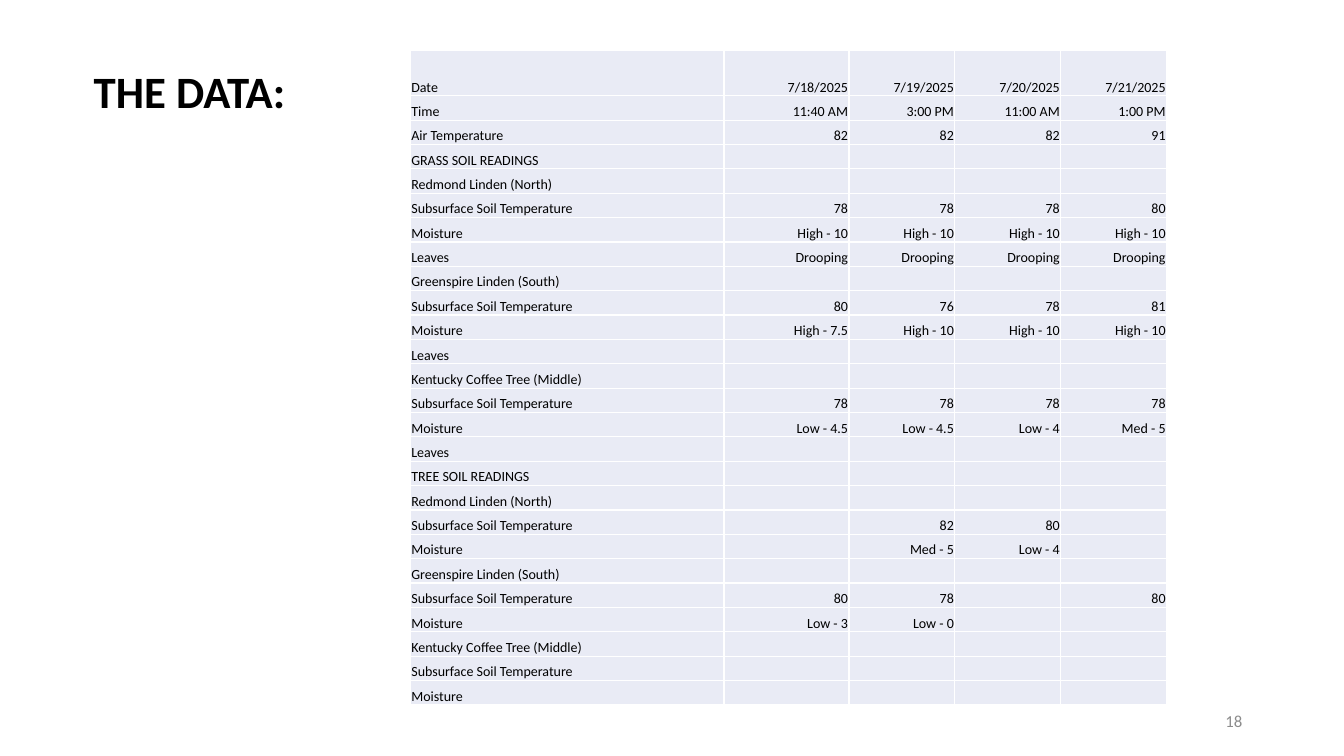
from lxml import etree
from pptx import Presentation
from pptx.dml.color import RGBColor
from pptx.enum.text import MSO_ANCHOR, PP_ALIGN
from pptx.oxml.ns import qn
from pptx.util import Inches, Pt

BLACK = RGBColor(0x00, 0x00, 0x00)
GRAY = RGBColor(0x8C, 0x8C, 0x8C)
WHITE = RGBColor(0xFF, 0xFF, 0xFF)
PALE_BLUE = RGBColor(0xE9, 0xEB, 0xF5)
LEFT, RIGHT = PP_ALIGN.LEFT, PP_ALIGN.RIGHT
TOP, MIDDLE, BOTTOM = MSO_ANCHOR.TOP, MSO_ANCHOR.MIDDLE, MSO_ANCHOR.BOTTOM

FONT = "Calibri"
CELL_SIZE = 10
PAGE_WIDTH, PAGE_HEIGHT = 13.33, 7.5
MARGIN = 0.5
TABLE_LEFT, TABLE_HEIGHT = 4.07, 6.5
COLUMN_WIDTHS = [3.11, 1.24] + [1.05] * 3
DATE_ROW_HEIGHT = 0.45

NORTH = "Redmond Linden (North)"
SOUTH = "Greenspire Linden (South)"
CENTER = "Kentucky Coffee Tree (Middle)"
SUBSURFACE = "Subsurface Soil Temperature"

READINGS = [
    ("Date", "7/18/2025", "7/19/2025", "7/20/2025", "7/21/2025"),
    ("Time", "11:40 AM", "3:00 PM", "11:00 AM", "1:00 PM"),
    ("Air Temperature", "82", "82", "82", "91"),
    ("GRASS SOIL READINGS",),
    (NORTH,),
    (SUBSURFACE, "78", "78", "78", "80"),
    ("Moisture", "High - 10", "High - 10", "High - 10", "High - 10"),
    ("Leaves", "Drooping", "Drooping", "Drooping", "Drooping"),
    (SOUTH,),
    (SUBSURFACE, "80", "76", "78", "81"),
    ("Moisture", "High - 7.5", "High - 10", "High - 10", "High - 10"),
    ("Leaves",),
    (CENTER,),
    (SUBSURFACE, "78", "78", "78", "78"),
    ("Moisture", "Low - 4.5", "Low - 4.5", "Low - 4", "Med - 5"),
    ("Leaves",),
    ("TREE SOIL READINGS",),
    (NORTH,),
    (SUBSURFACE, "", "82", "80"),
    ("Moisture", "", "Med - 5", "Low - 4"),
    (SOUTH,),
    (SUBSURFACE, "80", "78", "", "80"),
    ("Moisture", "Low - 3", "Low - 0"),
    (CENTER,),
    (SUBSURFACE,),
    ("Moisture",),
]


def write(para, text, size, color, align=LEFT, bold=False):
    para.alignment = align
    font = para.font
    font.name, font.size, font.bold = FONT, Pt(size), bold
    font.color.rgb = color
    if text:
        para.add_run().text = text
    else:
        etree.SubElement(para._p, qn("a:endParaRPr"), sz=str(size * 100))


def add_text(page, area, text, size, color, align=LEFT, anchor=TOP, bold=False):
    box = page.shapes.add_textbox(*map(Inches, area))
    frame = box.text_frame
    frame.word_wrap = True
    frame.vertical_anchor = anchor
    para = frame.paragraphs[0]
    write(para, text, size, color, align, bold)
    return para


def add_borders(cell, color, points):
    properties = cell._tc.get_or_add_tcPr()
    for side in ("lnL", "lnR", "lnT", "lnB"):
        line = etree.SubElement(properties, qn(f"a:{side}"), w=str(Pt(points)))
        fill = etree.SubElement(line, qn("a:solidFill"))
        etree.SubElement(fill, qn("a:srgbClr"), val=str(color))


def fill_cell(cell, text, align):
    cell.margin_left = cell.margin_right = cell.margin_top = Inches(0.01)
    cell.margin_bottom = 0
    cell.vertical_anchor = BOTTOM
    add_borders(cell, WHITE, 1)
    cell.fill.solid()
    cell.fill.fore_color.rgb = PALE_BLUE
    write(cell.text_frame.paragraphs[0], text, CELL_SIZE, BLACK, align)


def add_readings(page):
    row_count, column_count = len(READINGS), len(COLUMN_WIDTHS)
    area = (TABLE_LEFT, MARGIN, sum(COLUMN_WIDTHS), TABLE_HEIGHT)
    table = page.shapes.add_table(row_count, column_count, *map(Inches, area)).table
    table.first_row = table.horz_banding = False
    for column, width in zip(table.columns, COLUMN_WIDTHS):
        column.width = Inches(width)
    row_height = (TABLE_HEIGHT - DATE_ROW_HEIGHT) / (row_count - 1)
    for index, (row, values) in enumerate(zip(table.rows, READINGS)):
        row.height = Inches(row_height if index else DATE_ROW_HEIGHT)
        padded = values + ("",) * (column_count - len(values))
        for position, (cell, text) in enumerate(zip(row.cells, padded)):
            fill_cell(cell, text, RIGHT if position else LEFT)


def main():
    deck = Presentation()
    deck.slide_width, deck.slide_height = Inches(PAGE_WIDTH), Inches(PAGE_HEIGHT)
    page = deck.slides.add_slide(deck.slide_layouts[6])
    title = add_text(page, (0.83, MARGIN, 2.78, 0.68), "THE DATA:", 32, BLACK, bold=True)
    title.line_spacing = 1.15
    title.space_after = Pt(8)
    add_readings(page)
    add_text(page, (9.42, 6.95, 3, 0.4), "18", 12, GRAY, RIGHT, MIDDLE)
    deck.save("out.pptx")


if __name__ == "__main__":
    main()
